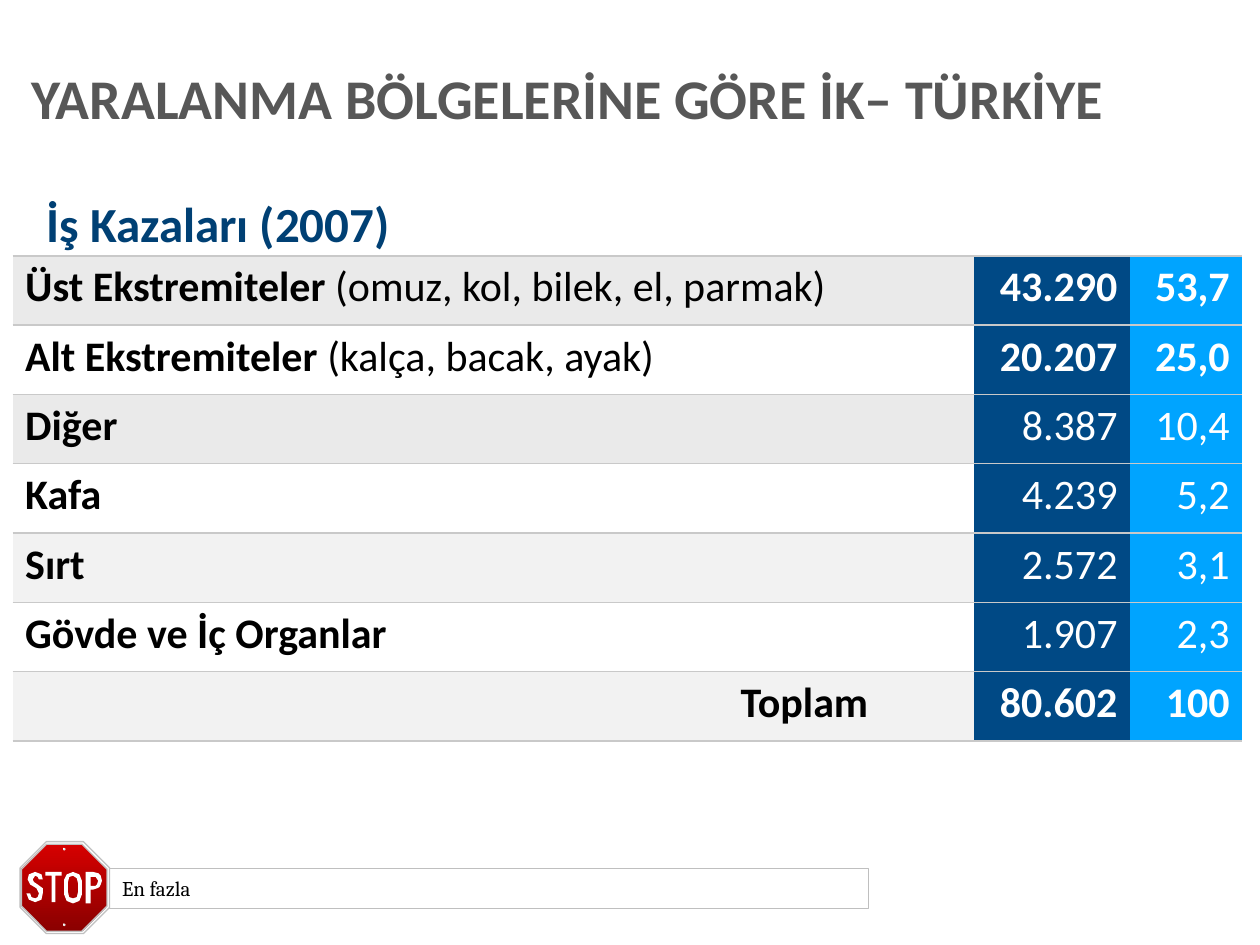
from dataclasses import dataclass

from lxml import etree
from pptx import Presentation
from pptx.dml.color import RGBColor
from pptx.enum.shapes import MSO_SHAPE
from pptx.enum.text import MSO_ANCHOR, MSO_AUTO_SIZE, PP_ALIGN
from pptx.oxml.ns import qn
from pptx.util import Inches, Pt

LEFT, RIGHT = PP_ALIGN.LEFT, PP_ALIGN.RIGHT
TOP, MIDDLE = MSO_ANCHOR.TOP, MSO_ANCHOR.MIDDLE
NO_AUTOFIT = MSO_AUTO_SIZE.NONE
RECTANGLE, OVAL, OCTAGON = MSO_SHAPE.RECTANGLE, MSO_SHAPE.OVAL, MSO_SHAPE.OCTAGON

COLORS = {
    "black": "000000", "white": "FFFFFF", "title": "575757",
    "heading": "004074", "count": "004985", "percent": "00A4FF",
    "strong_band": "EAEAEA", "soft_band": "F2F2F2", "rule": "C9C9C9",
    "frame": "BFBFBF", "sign_edge": "C0C0C0", "rivet": "E4E4E4",
    "sign_top": "D60000", "sign_bottom": "8A0000",
}
ROW_HEIGHT = 0.55
COLUMN_WIDTHS = (7.63, 1.24, 0.89)


@dataclass
class Span:
    text: str
    color: str = "black"
    size: float = 24
    bold: bool = True
    font: str = "Calibri"


@dataclass
class InjuryRow:
    region: str
    count: str
    percent: str
    band: str
    detail: str = ""
    bold_values: bool = False


ROWS = (
    InjuryRow("Üst Ekstremiteler ", "43.290", "53,7", "strong_band",
              "(omuz, kol, bilek, el, parmak)", True),
    InjuryRow("Alt Ekstremiteler ", "20.207", "25,0", "white",
              "(kalça, bacak, ayak)", True),
    InjuryRow("Diğer", "8.387", "10,4", "strong_band"),
    InjuryRow("Kafa", "4.239", "5,2", "white"),
    InjuryRow("Sırt", "2.572", "3,1", "soft_band"),
    InjuryRow("Gövde ve İç Organlar", "1.907", "2,3", "white"),
    InjuryRow("Toplam", "80.602", "100", "soft_band", bold_values=True),
)

# Letter contours in hundredths of an inch; a second contour is the hole.
SIGN_LETTERS = (
    [[(31, 698), (34, 698), (33, 694), (28, 692), (23, 694), (22, 698),
      (24, 702), (29, 705), (31, 709), (30, 712), (28, 713), (25, 712),
      (24, 709), (21, 709), (23, 714), (28, 716), (33, 714), (34, 709),
      (34, 705), (30, 702), (27, 700), (26, 698), (28, 695), (30, 696)]],
    [[(41, 716), (41, 695), (36, 695), (36, 692), (49, 692), (49, 695),
      (44, 695), (44, 716)]],
    [[(58, 692), (53, 694), (51, 698), (51, 710), (53, 715), (58, 717),
      (63, 715), (65, 710), (65, 699), (63, 694)],
     [(58, 695), (55, 696), (54, 700), (54, 708), (55, 712), (58, 713),
      (61, 712), (62, 708), (62, 701), (61, 697)]],
    [[(68, 692), (74, 692), (78, 693), (80, 695), (81, 699), (80, 702),
      (79, 704), (77, 705), (74, 706), (72, 706), (72, 717), (68, 717)],
     [(72, 696), (76, 696), (78, 699), (77, 702), (76, 703), (72, 703)]],
)


def rgb(name: str) -> RGBColor:
    return RGBColor.from_string(COLORS[name])


def write_spans(frame, spans: list[Span], align=LEFT, anchor=TOP, margins=None):
    frame.word_wrap = True
    frame.vertical_anchor = anchor
    for side, value in (margins or {}).items():
        setattr(frame, f"margin_{side}", Inches(value))
    para = frame.paragraphs[0]
    para.alignment = align
    for span in spans:
        run = para.add_run()
        run.text = span.text
        font_values = {"name": span.font, "size": Pt(span.size), "bold": span.bold}
        for name, value in font_values.items():
            setattr(run.font, name, value)
        run.font.color.rgb = rgb(span.color)
    return para


def style_shape(shape, fill=None, line=None, line_width=0.75) -> None:
    shape.shadow.inherit = False
    if fill:
        shape.fill.solid()
        shape.fill.fore_color.rgb = rgb(fill)
    else:
        shape.fill.background()
    if line:
        shape.line.color.rgb = rgb(line)
        shape.line.width = Pt(line_width)
    else:
        shape.line.fill.background()


def add_preset(shapes, kind, bounds, **style):
    shape = shapes.add_shape(kind, *map(Inches, bounds))
    style_shape(shape, **style)
    return shape


def set_borders(cell) -> None:
    """Rule the cell above and below and leave its sides open."""
    properties = cell._tc.get_or_add_tcPr()
    for index, side in enumerate(("lnL", "lnR", "lnT", "lnB")):
        border = etree.Element(qn(f"a:{side}"), w=str(Pt(1)))
        if side in ("lnL", "lnR"):
            etree.SubElement(border, qn("a:noFill"))
        else:
            fill = etree.SubElement(border, qn("a:solidFill"))
            etree.SubElement(fill, qn("a:srgbClr"), val=COLORS["rule"])
        properties.insert(index, border)


def add_injury_table(slide) -> None:
    frame = slide.shapes.add_table(
        len(ROWS), len(COLUMN_WIDTHS), Inches(0.1), Inches(2.03),
        Inches(sum(COLUMN_WIDTHS)), Inches(ROW_HEIGHT * len(ROWS)))
    table = frame.table
    table.first_row = False
    for column, width in zip(table.columns, COLUMN_WIDTHS):
        column.width = Inches(width)
    for row_index, row in enumerate(ROWS):
        table.rows[row_index].height = Inches(ROW_HEIGHT)
        region = [Span(row.region)]
        if row.detail:
            region.append(Span(row.detail, bold=False))
        values = [[Span(text, "white", bold=row.bold_values)]
                  for text in (row.count, row.percent)]
        fills = (row.band, "count", "percent")
        for column_index, spans in enumerate([region, *values]):
            cell = table.cell(row_index, column_index)
            cell.fill.solid()
            cell.fill.fore_color.rgb = rgb(fills[column_index])
            write_spans(cell.text_frame, spans, RIGHT if column_index else LEFT)
            set_borders(cell)
    total = table.cell(len(ROWS) - 1, 0)
    total.text_frame.paragraphs[0].alignment = RIGHT
    total.margin_right = Inches(0.84)


def add_letter(shapes, contours) -> None:
    builder = shapes.build_freeform(*contours[0][0], scale=Inches(0.01))
    for index, contour in enumerate(contours):
        if index:
            builder.move_to(*contour[0])
        builder.add_line_segments(contour[1:], close=True)
    style_shape(builder.convert_to_shape(), fill="white")


def add_stop_sign(slide) -> None:
    shapes = slide.shapes.add_group_shape().shapes
    add_preset(shapes, OCTAGON, (0.16, 6.68, 0.71, 0.73),
               fill="white", line="sign_edge")
    face = add_preset(shapes, OCTAGON, (0.17, 6.7, 0.68, 0.69), line="sign_edge")
    face.fill.gradient()
    face.fill.gradient_angle = 270
    for stop, color, position in zip(face.fill.gradient_stops,
                                     ("sign_top", "sign_bottom"), (0, 1)):
        stop.color.rgb = rgb(color)
        stop.position = position
    for contours in SIGN_LETTERS:
        add_letter(shapes, contours)
    for top in (7.33, 6.73):
        add_preset(shapes, OVAL, (0.5, top, 0.02, 0.02), fill="rivet")
        add_preset(shapes, OVAL, (0.5, top, 0.01, 0.01), fill="white")


def main() -> None:
    deck = Presentation()
    deck.slide_width, deck.slide_height = Inches(10), Inches(7.5)
    slide = deck.slides.add_slide(deck.slide_layouts[5])

    title = slide.shapes.title
    bounds = {"left": 0.25, "top": 0.45, "width": 9.64, "height": 0.71}
    for name, value in bounds.items():
        setattr(title, name, Inches(value))
    heading = write_spans(
        title.text_frame,
        [Span("YARALANMA BÖLGELERİNE GÖRE İK– TÜRKİYE", "title", 32)],
        anchor=MIDDLE, margins={"left": 0, "right": 0})
    heading.line_spacing = 0.9
    title.text_frame.auto_size = NO_AUTOFIT

    add_injury_table(slide)
    subtitle = slide.shapes.add_textbox(*map(Inches, (0.27, 1.49, 5.19, 0.57)))
    write_spans(subtitle.text_frame, [Span("İş Kazaları (2007)", "heading", 28)])
    add_stop_sign(slide)
    note = add_preset(slide.shapes, RECTANGLE, (0.87, 6.89, 6.02, 0.32),
                      line="frame", line_width=0.25)
    write_spans(note.text_frame,
                [Span("En fazla", size=12, bold=False, font="Cambria")], anchor=MIDDLE)
    deck.save("out.pptx")


if __name__ == "__main__":
    main()
